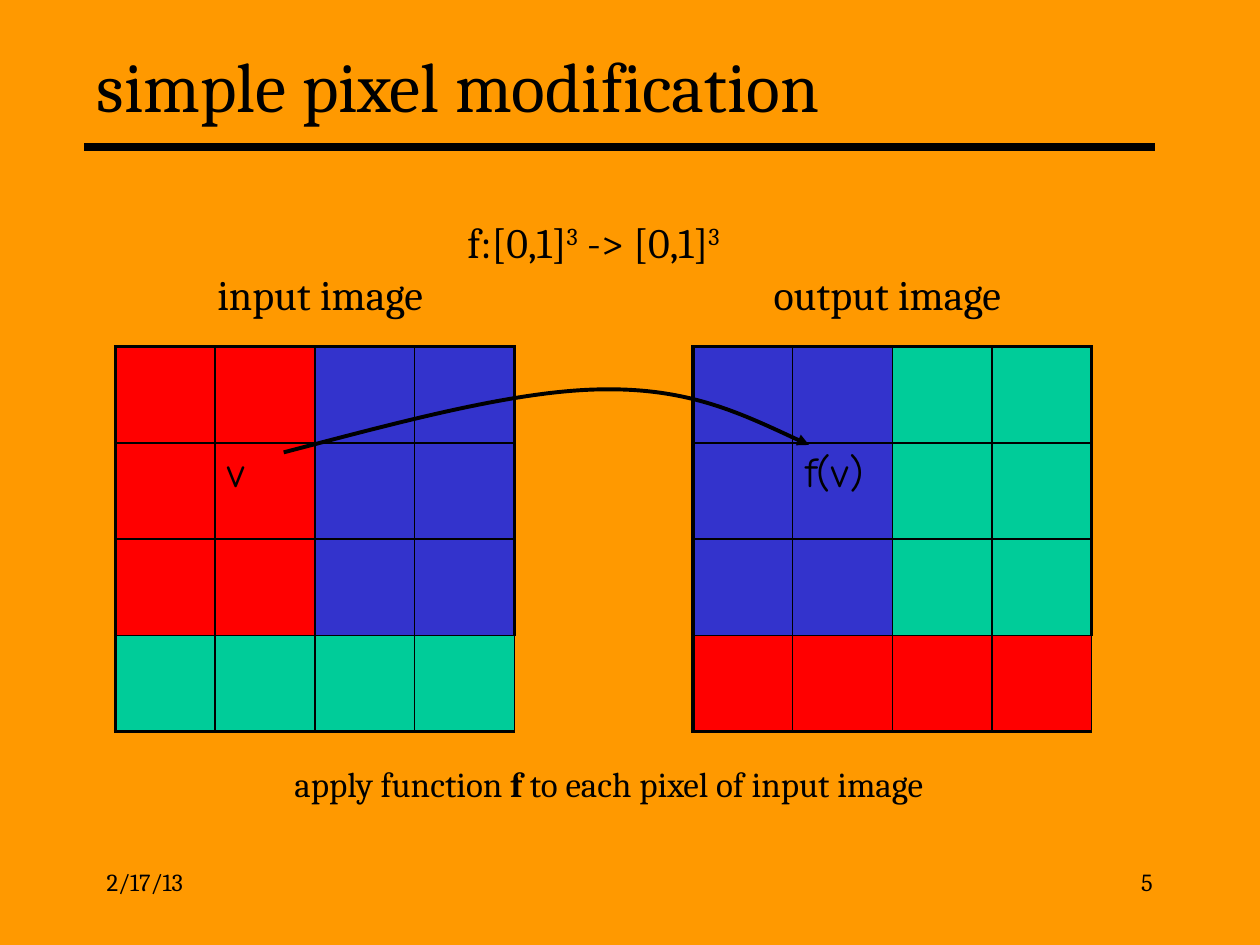
from dataclasses import dataclass

from lxml import etree
from pptx import Presentation
from pptx.dml.color import RGBColor
from pptx.enum.shapes import MSO_CONNECTOR
from pptx.enum.text import MSO_ANCHOR, MSO_AUTO_SIZE, PP_ALIGN
from pptx.oxml.ns import qn
from pptx.util import Cm, Pt

STRAIGHT = MSO_CONNECTOR.STRAIGHT
MIDDLE = MSO_ANCHOR.MIDDLE
TOP = MSO_ANCHOR.TOP
FIXED = MSO_AUTO_SIZE.NONE
GROW = MSO_AUTO_SIZE.SHAPE_TO_FIT_TEXT
LEFT, CENTER, RIGHT = PP_ALIGN.LEFT, PP_ALIGN.CENTER, PP_ALIGN.RIGHT
TITLE_ONLY = 5
GRID_SIZE = 4


@dataclass(frozen=True)
class Theme:
    background: str = "FF9900"
    ink: str = "000000"
    red: str = "FF0000"
    blue: str = "3333CC"
    green: str = "00CC99"
    font: str = "Cambria"
    pixel_font: str = "Comic Neue"
    title_size: float = 40
    label_size: float = 24
    caption_size: float = 20
    footer_size: float = 14
    rule_width: float = 4.5
    outer_width: float = 2.25
    inner_width: float = 1


THEME = Theme()


@dataclass(frozen=True)
class Span:
    text: str
    bold: bool = False
    superscript: bool = False


@dataclass(frozen=True)
class Label:
    spans: tuple[Span, ...]
    left: float
    top: float
    width: float
    height: float
    size: float
    alignment: PP_ALIGN = CENTER
    auto_size: MSO_AUTO_SIZE = GROW


@dataclass(frozen=True)
class PixelGrid:
    left: float
    left_color: str
    right_color: str
    bottom_color: str
    pixel_text: str


LABELS = (
    Label((Span("2/17/13"),), 1.9, 17.35, 5.28, 1.27, THEME.footer_size, LEFT, FIXED),
    Label((Span("5"),), 18.21, 17.35, 5.28, 1.27, THEME.footer_size, RIGHT, FIXED),
    Label(
        (Span("apply function "), Span("f", bold=True), Span(" to each pixel of input image")),
        1.9, 15.24, 20.75, 1.09, THEME.caption_size,
    ),
    Label((Span("input image"),), 3.38, 5.28, 6.15, 1.27, THEME.label_size),
    Label((Span("output image"),), 14.81, 5.28, 6.15, 1.27, THEME.label_size),
    Label(
        (
            Span("f:[0,1]"), Span("3", superscript=True),
            Span(" -> [0,1]"), Span("3", superscript=True),
        ),
        7.62, 4.24, 8.69, 1.27, THEME.label_size,
    ),
)

GRIDS = (
    PixelGrid(2.33, THEME.red, THEME.blue, THEME.green, "v"),
    PixelGrid(13.97, THEME.blue, THEME.green, THEME.red, "f(v)"),
)
GRID_TOP, CELL_WIDTH, CELL_HEIGHT = 6.99, 2.01, 1.94

MAPPING_CURVE = (
    (5.72, 9.12), (8.05, 8.51), (10.39, 7.87), (12.14, 7.85),
    (13.92, 7.82), (15.09, 8.41), (16.31, 8.97),
)


def write_spans(paragraph, spans: tuple[Span, ...], size: float, font_name: str) -> None:
    for span in spans:
        run = paragraph.add_run()
        run.text = span.text
        font_format = {"name": font_name, "size": Pt(size), "bold": span.bold}
        for name, value in font_format.items():
            setattr(run.font, name, value)
        run.font.color.rgb = RGBColor.from_string(THEME.ink)
        if span.superscript:
            run._r.get_or_add_rPr().set("baseline", "30000")


def format_frame(frame, anchor: MSO_ANCHOR, auto_size: MSO_AUTO_SIZE) -> None:
    frame_format = {"word_wrap": True, "vertical_anchor": anchor, "auto_size": auto_size}
    for name, value in frame_format.items():
        setattr(frame, name, value)


def draw_title(slide) -> None:
    title = slide.shapes.title
    place = {"left": Cm(1.7), "top": Cm(0.64), "width": Cm(21.59), "height": Cm(2.11)}
    for name, value in place.items():
        setattr(title, name, value)
    format_frame(title.text_frame, MIDDLE, FIXED)
    paragraph = title.text_frame.paragraphs[0]
    paragraph.alignment = LEFT
    write_spans(paragraph, (Span("simple pixel modification"),), THEME.title_size, THEME.font)


def draw_rule(slide) -> None:
    rule = slide.shapes.add_connector(STRAIGHT, Cm(1.7), Cm(2.97), Cm(23.29), Cm(2.97))
    rule.line.width = Pt(THEME.rule_width)
    rule.line.color.rgb = RGBColor.from_string(THEME.ink)
    etree.SubElement(rule._element.spPr, qn("a:effectLst"))


def draw_label(slide, label: Label) -> None:
    shape = slide.shapes.add_textbox(
        Cm(label.left), Cm(label.top), Cm(label.width), Cm(label.height)
    )
    format_frame(shape.text_frame, TOP, label.auto_size)
    paragraph = shape.text_frame.paragraphs[0]
    paragraph.alignment = label.alignment
    write_spans(paragraph, label.spans, label.size, THEME.font)


def set_borders(cell, row: int, column: int) -> None:
    last = GRID_SIZE - 1
    outer_sides = {
        "a:lnL": column == 0,
        "a:lnR": column == last and row < last,
        "a:lnT": row == 0,
        "a:lnB": row == last,
    }
    properties = cell._tc.get_or_add_tcPr()
    for tag, is_outer in outer_sides.items():
        width = THEME.outer_width if is_outer else THEME.inner_width
        border = etree.SubElement(properties, qn(tag), w=str(int(Pt(width))))
        fill = etree.SubElement(border, qn("a:solidFill"))
        etree.SubElement(fill, qn("a:srgbClr"), val=THEME.ink)


def draw_grid(slide, grid: PixelGrid) -> None:
    table = slide.shapes.add_table(
        GRID_SIZE, GRID_SIZE, Cm(grid.left), Cm(GRID_TOP),
        Cm(CELL_WIDTH * GRID_SIZE), Cm(CELL_HEIGHT * GRID_SIZE),
    ).table
    table.first_row = table.horz_banding = False
    for row in range(GRID_SIZE):
        for column in range(GRID_SIZE):
            cell = table.cell(row, column)
            set_borders(cell, row, column)
            upper_color = grid.left_color if column < GRID_SIZE // 2 else grid.right_color
            color = grid.bottom_color if row == GRID_SIZE - 1 else upper_color
            cell.fill.solid()
            cell.fill.fore_color.rgb = RGBColor.from_string(color)
    paragraph = table.cell(1, 1).text_frame.paragraphs[0]
    write_spans(paragraph, (Span(grid.pixel_text),), THEME.label_size, THEME.pixel_font)


def draw_mapping_arrow(slide) -> None:
    start, *controls = [(Cm(x), Cm(y)) for x, y in MAPPING_CURVE]
    builder = slide.shapes.build_freeform(*start)
    builder.add_line_segments(controls, close=False)
    arrow = builder.convert_to_shape()
    outline = arrow._element.spPr.find(".//" + qn("a:path"))
    segments = outline.findall(qn("a:lnTo"))
    for first in range(0, len(segments), 3):
        curve = etree.SubElement(outline, qn("a:cubicBezTo"))
        for segment in segments[first:first + 3]:
            curve.append(segment[0])
            outline.remove(segment)
    arrow.shadow.inherit = False
    arrow.fill.background()
    arrow.line.width = Pt(THEME.outer_width)
    arrow.line.color.rgb = RGBColor.from_string(THEME.ink)
    etree.SubElement(arrow.line._get_or_add_ln(), qn("a:tailEnd"), type="triangle")


def main() -> None:
    presentation = Presentation()
    presentation.slide_width, presentation.slide_height = Cm(25.4), Cm(19.05)
    slide = presentation.slides.add_slide(presentation.slide_layouts[TITLE_ONLY])
    slide.background.fill.solid()
    slide.background.fill.fore_color.rgb = RGBColor.from_string(THEME.background)
    draw_rule(slide)
    draw_title(slide)
    for grid in GRIDS:
        draw_grid(slide, grid)
    draw_mapping_arrow(slide)
    for label in LABELS:
        draw_label(slide, label)
    presentation.save("out.pptx")


if __name__ == "__main__":
    main()
